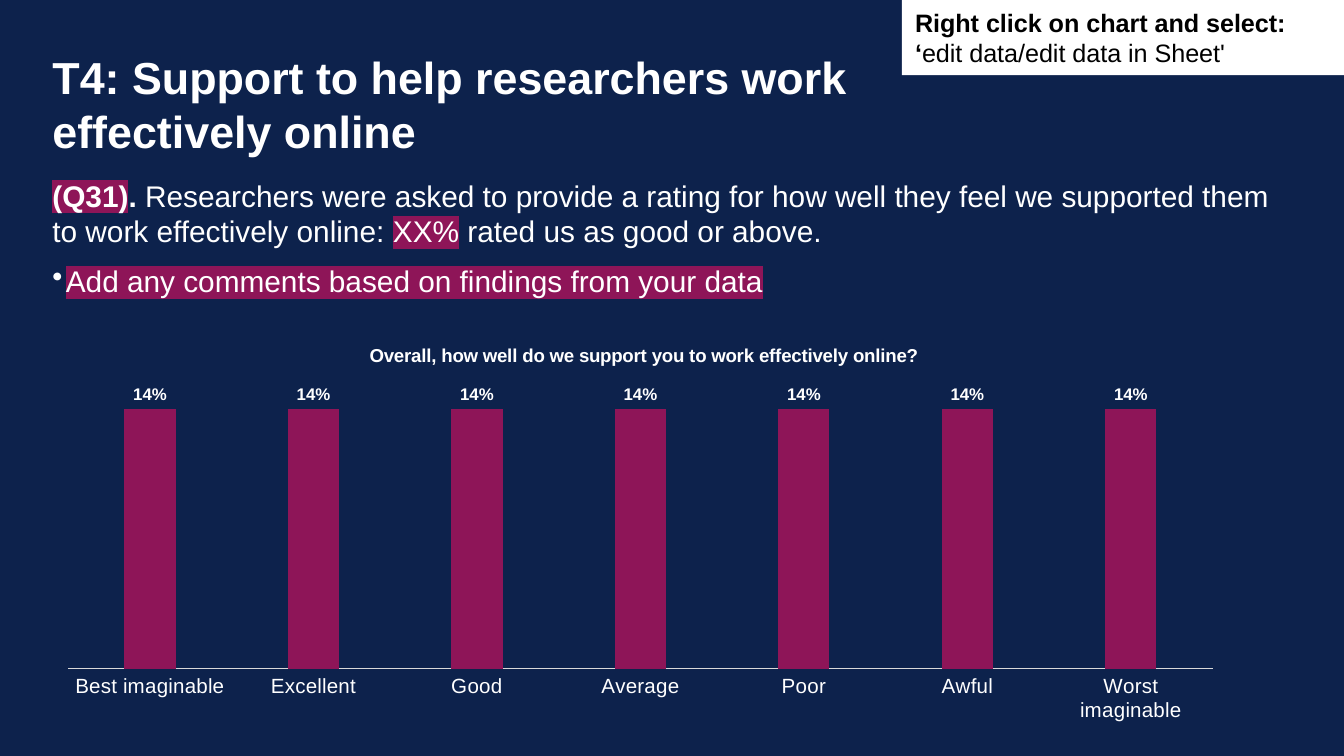
from dataclasses import dataclass

from lxml.etree import SubElement
from pptx import Presentation
from pptx.chart.data import CategoryChartData
from pptx.dml.color import RGBColor
from pptx.enum.chart import XL_CHART_TYPE, XL_LABEL_POSITION, XL_TICK_MARK
from pptx.enum.shapes import MSO_SHAPE
from pptx.enum.text import MSO_ANCHOR, MSO_AUTO_SIZE, PP_ALIGN
from pptx.oxml import parse_xml
from pptx.oxml.ns import nsdecls, qn
from pptx.util import Pt

NAVY, PLUM, WHITE, BLACK, GREY = "0D224C", "8E1558", "FFFFFF", "000000", "D9D9D9"
TYPEFACE = "Arial"


@dataclass
class Span:
    text: str
    bold: bool = False
    highlighted: bool = False


@dataclass
class Para:
    spans: list[Span]
    size: float
    color: str = WHITE
    space_before: float = 0
    bullet: bool = False


@dataclass
class Area:
    left: float
    top: float
    width: float
    height: float

    def lengths(self) -> tuple:
        return Pt(self.left), Pt(self.top), Pt(self.width), Pt(self.height)


def rgb(color: str) -> RGBColor:
    return RGBColor.from_string(color)


def style_font(font, size: float, color: str, bold: bool | None = None) -> None:
    font.name, font.size, font.bold = TYPEFACE, Pt(size), bold
    font.color.rgb = rgb(color)


def fill_frame(frame, paras: list[Para], inset_x: float = 0, inset_y: float = 0) -> None:
    frame.word_wrap = True
    frame.auto_size = MSO_AUTO_SIZE.NONE
    frame.margin_left = frame.margin_right = Pt(inset_x)
    frame.margin_top = frame.margin_bottom = Pt(inset_y)
    for index, para in enumerate(paras):
        paragraph = frame.paragraphs[0] if index == 0 else frame.add_paragraph()
        paragraph.alignment = PP_ALIGN.LEFT
        paragraph.line_spacing = 1.0
        paragraph.space_before = Pt(para.space_before)
        if para.bullet:
            properties = paragraph._p.get_or_add_pPr()
            properties.set("marL", str(Pt(7.2)))
            properties.set("indent", str(Pt(-7.2)))
            SubElement(properties, qn("a:buChar"), char="•")
        style_font(paragraph.font, para.size, para.color)
        for span in para.spans:
            run = paragraph.add_run()
            run.text = span.text
            run.font.bold = span.bold
            if span.highlighted:
                highlight = SubElement(run.font._element, qn("a:highlight"))
                SubElement(highlight, qn("a:srgbClr"), val=PLUM)


def manual_layout(left: float, top: float, width: float = 0, height: float = 0):
    values = {"x": left, "y": top}
    if width:
        values |= {"w": width, "h": height}
    target = '<c:layoutTarget val="inner"/>' if width else ""
    modes = '<c:xMode val="edge"/><c:yMode val="edge"/>'
    places = "".join(f'<c:{key} val="{value}"/>' for key, value in values.items())
    return parse_xml(
        f'<c:layout {nsdecls("c")}><c:manualLayout>{target}{modes}{places}'
        "</c:manualLayout></c:layout>"
    )


def place_layout(parent, layout, position: int) -> None:
    for existing in parent.findall(qn("c:layout")):
        parent.remove(existing)
    parent.insert(position, layout)


def add_rating_chart(slide, area: Area) -> None:
    ratings = ["Best imaginable", "Excellent", "Good", "Average", "Poor", "Awful", "Worst imaginable"]
    data = CategoryChartData(number_format="0%")
    data.categories = ratings
    data.add_series("Series 1", [0.14] * len(ratings))
    chart = slide.shapes.add_chart(XL_CHART_TYPE.COLUMN_CLUSTERED, *area.lengths(), data).chart
    style_font(chart.font, 10, BLACK)
    chart.has_legend = False

    chart.has_title = True
    heading = chart.chart_title.text_frame.paragraphs[0]
    style_font(heading.font, 10, WHITE, True)
    heading.add_run().text = "Overall, how well do we support you to work effectively online?"
    chart.chart_title.include_in_layout = False
    place_layout(chart.chart_title._element, manual_layout(0.27, 0.04), 1)
    plot_area = chart._chartSpace.chart.plotArea
    place_layout(plot_area, manual_layout(0.02, 0.12, 0.96, 0.73), 0)

    category_axis, value_axis = chart.category_axis, chart.value_axis
    category_axis.major_tick_mark = category_axis.minor_tick_mark = XL_TICK_MARK.NONE
    style_font(category_axis.tick_labels.font, 11, WHITE)
    category_axis.format.line.color.rgb = rgb(GREY)
    category_axis.format.line.width = Pt(0.75)
    value_axis.visible = value_axis.has_major_gridlines = False
    value_axis.minimum_scale, value_axis.maximum_scale = 0, 0.16
    value_axis.tick_labels.number_format = "0%"
    value_axis.tick_labels.number_format_is_linked = False

    plot = chart.plots[0]
    plot.vary_by_categories = False
    plot.gap_width, plot.overlap = 219, -27
    series = plot.series[0]
    series.format.fill.solid()
    series.format.fill.fore_color.rgb = rgb(PLUM)
    labels = series.data_labels
    labels.show_value = True
    labels.number_format, labels.number_format_is_linked = "0%", False
    labels.position = XL_LABEL_POSITION.OUTSIDE_END
    style_font(labels.font, 9, WHITE, True)


def add_callout(slide, area: Area, para: Para) -> None:
    box = slide.shapes.add_shape(MSO_SHAPE.RECTANGLE, *area.lengths())
    box.shadow.inherit = False
    box.fill.solid()
    box.fill.fore_color.rgb = rgb(WHITE)
    box.line.fill.background()
    box.text_frame.vertical_anchor = MSO_ANCHOR.MIDDLE
    fill_frame(box.text_frame, [para], 7.2, 3.6)


def main() -> None:
    deck = Presentation()
    deck.slide_width, deck.slide_height = Pt(720), Pt(405)
    page = deck.slides.add_slide(deck.slide_layouts[5])
    page.background.fill.solid()
    page.background.fill.fore_color.rgb = rgb(NAVY)

    title = page.shapes.title
    title.left, title.top, title.width, title.height = Area(28.1, 26.6, 442.8, 26.6).lengths()
    title.text_frame.vertical_anchor = MSO_ANCHOR.TOP
    heading = Span("T4: Support to help researchers work effectively online", bold=True)
    fill_frame(title.text_frame, [Para([heading], 24)])

    summary = page.shapes.add_textbox(*Area(28.1, 95, 668.2, 84.2).lengths())
    finding = [
        Span("(Q31)", bold=True, highlighted=True),
        Span(". ", bold=True),
        Span("Researchers were asked to provide a rating for how well they feel "
             "we supported them to work effectively online: "),
        Span("XX%", highlighted=True),
        Span(" rated us as good or above."),
    ]
    comment = [Span("Add any comments based on findings from your data", highlighted=True)]
    fill_frame(summary.text_frame, [
        Para(finding, 16),
        Para(comment, 16, space_before=7.5, bullet=True),
    ])

    add_rating_chart(page, Area(23.8, 173.5, 638.6, 217.4))
    hint = [
        Span("Right click on chart and select: ‘", bold=True),
        Span("edit data/edit data in Sheet'"),
    ]
    add_callout(page, Area(483.1, 0, 236.9, 40.3), Para(hint, 13.5, BLACK))
    deck.save("out.pptx")


if __name__ == "__main__":
    main()
